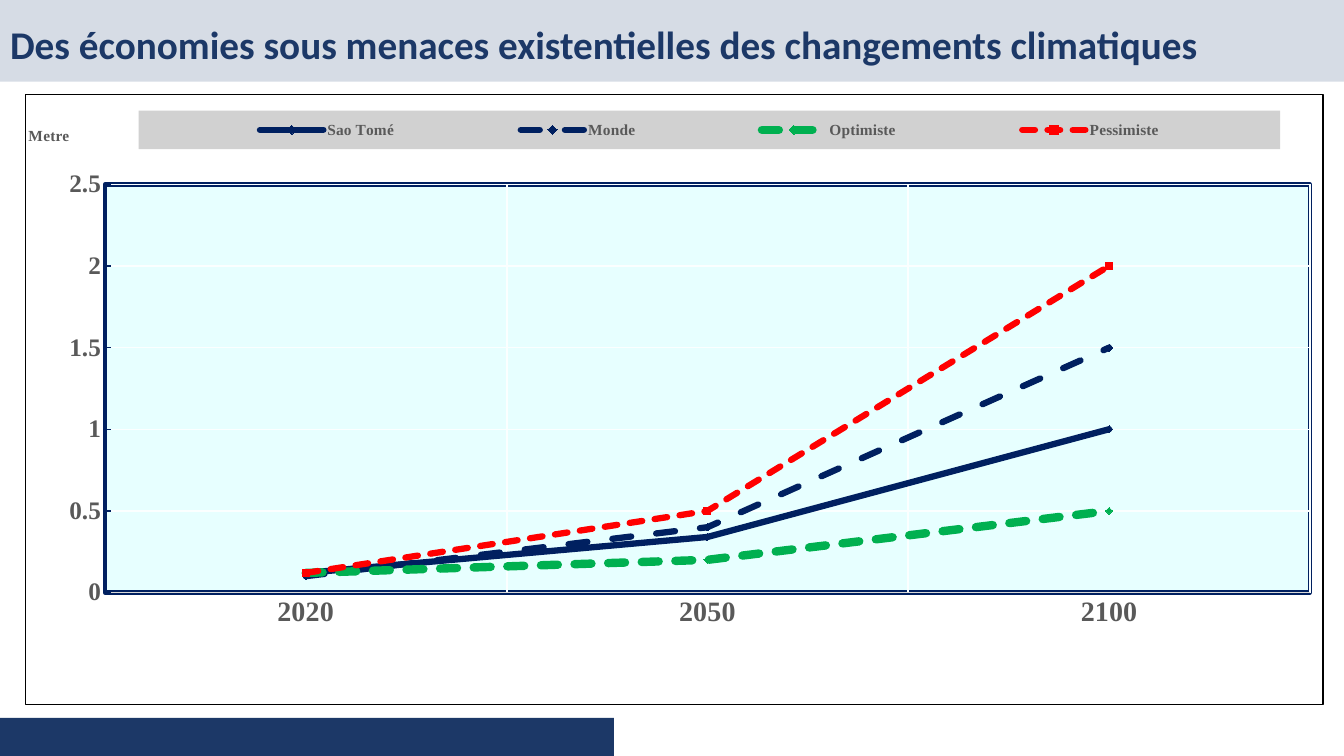
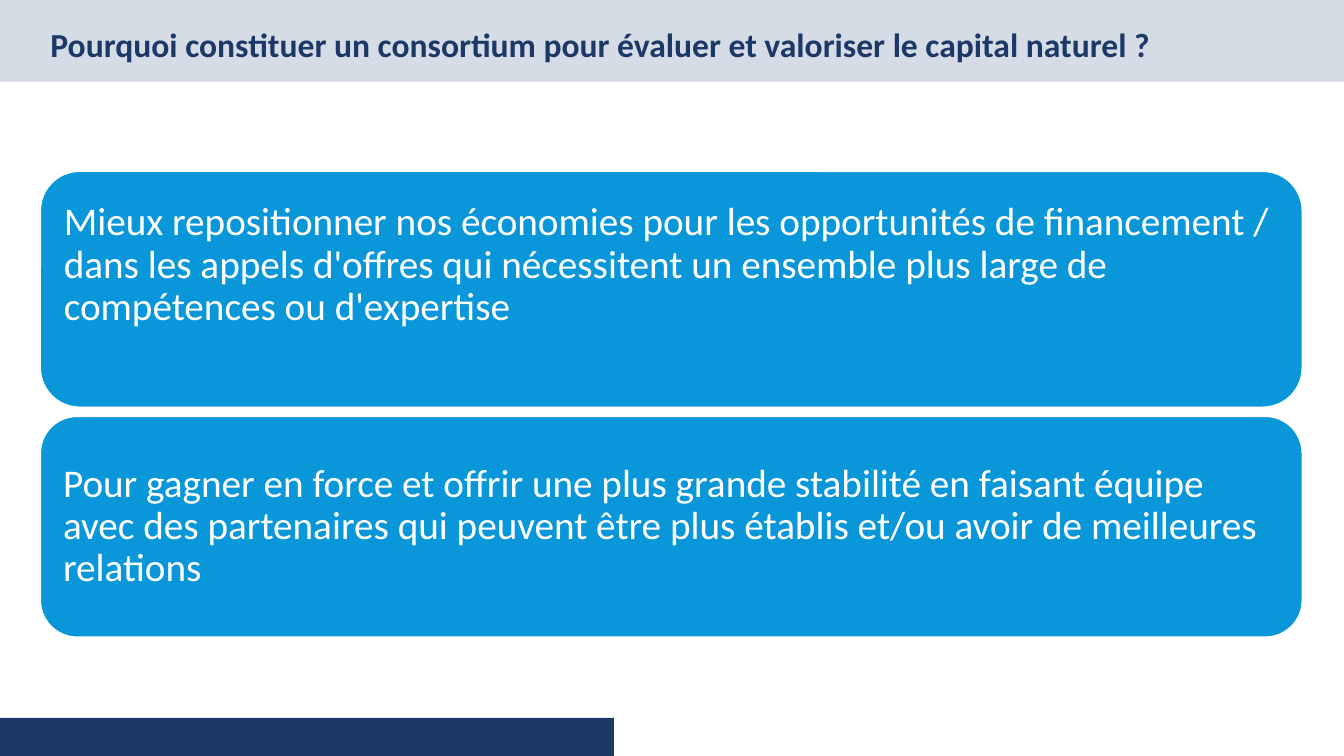
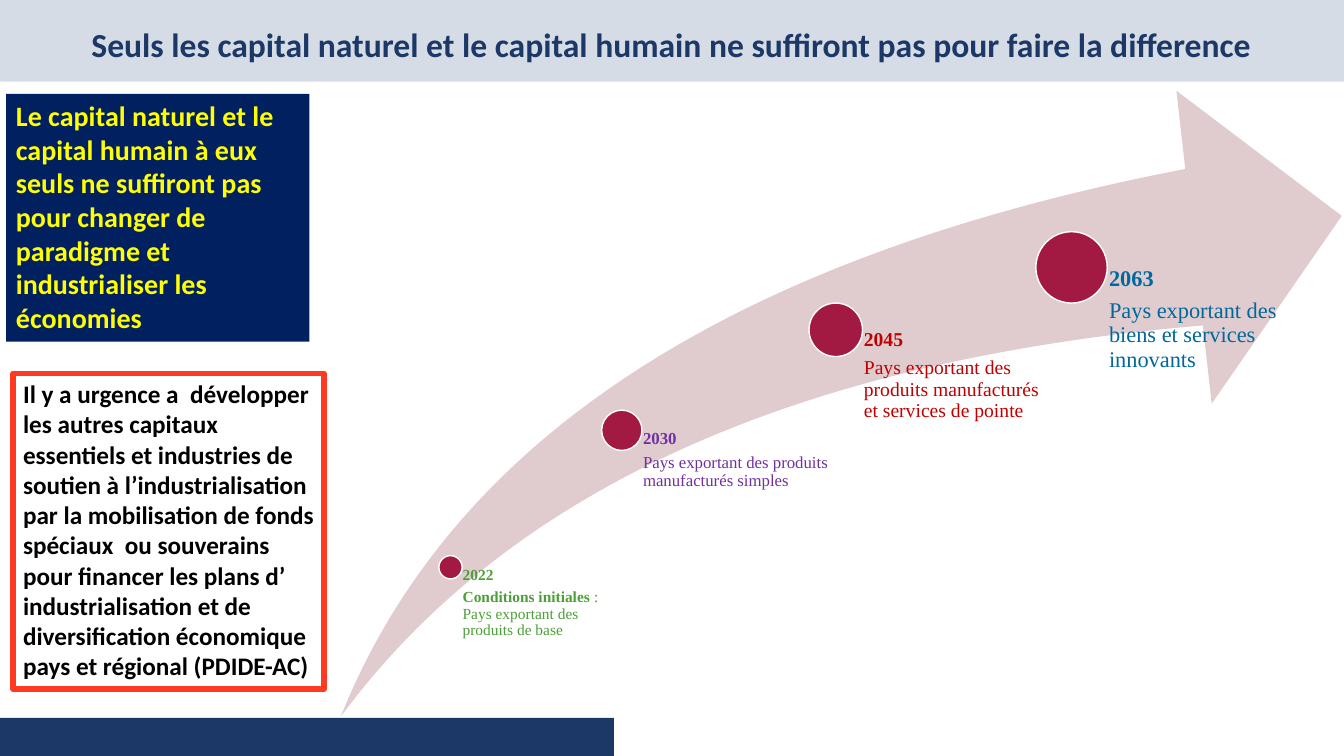
from pptx import Presentation
from pptx.chart.data import CategoryChartData
from pptx.dml.color import RGBColor
from pptx.enum.chart import XL_CHART_TYPE, XL_LEGEND_POSITION, XL_MARKER_STYLE, XL_TICK_MARK
from pptx.enum.dml import MSO_LINE
from pptx.enum.shapes import MSO_SHAPE
from pptx.enum.text import MSO_ANCHOR, MSO_AUTO_SIZE, PP_ALIGN
from pptx.oxml import parse_xml
from pptx.oxml.ns import nsdecls
from pptx.util import Pt

# Shared look
NAVY, DEEP_BLUE, GREY = "1C3867", "002060", "595959"
SANS, SERIF = "Calibri", "Times New Roman"
BANDS = [((0, 0, 960, 58.3), "D6DCE5"), ((0, 512.8, 438.5, 27.2), NAVY)]
MARGIN, CONTENT_W = 28.8, 901.4

# Slide 1: sea level chart
CLIMATE_TITLE = "Des économies sous menaces existentielles des changements climatiques"
YEARS = ["2020", "2050", "2100"]
SCENARIOS = [  # name, values, colour, width, dash, marker
    ("Sao Tomé", (0.12, 0.34, 1), DEEP_BLUE, 4.5, MSO_LINE.SOLID, XL_MARKER_STYLE.DIAMOND),
    ("Monde", (0.1, 0.4, 1.5), DEEP_BLUE, 4.5, MSO_LINE.DASH, XL_MARKER_STYLE.DIAMOND),
    ("Optimiste", (0.12, 0.2, 0.5), "00B050", 6, MSO_LINE.SQUARE_DOT, XL_MARKER_STYLE.DIAMOND),
    ("Pessimiste", (0.12, 0.5, 2), "FF0000", 4.5, MSO_LINE.SQUARE_DOT, XL_MARKER_STYLE.SQUARE),
]

# Slide 2: reasons
CONSORTIUM_TITLE = "Pourquoi constituer un consortium pour évaluer et valoriser le capital naturel ?"
REASONS = [  # text, top, height, extra space below the text
    ("Mieux repositionner nos économies pour les opportunités de financement /\v"
     "dans les appels d'offres qui nécessitent un ensemble plus large de compétences "
     "ou d'expertise", 122.4, 168.5, 34),
    ("Pour gagner en force et offrir une plus grande stabilité en faisant équipe avec des "
     "partenaires qui peuvent être plus établis et/ou avoir de meilleures relations",
     297.4, 157.7, 0),
]

# Slide 3: road to 2063
ROADMAP_TITLE = ("Seuls les capital naturel et le capital humain ne suffiront pas "
                 "pour faire la difference")
MESSAGES = [  # text, place, fill, line, text colour, size
    ("Il y a urgence a  développer les autres capitaux essentiels et industries de soutien à "
     "l’industrialisation par la mobilisation de fonds spéciaux  ou souverains pour financer "
     "les plans d’ industrialisation et de diversification économique pays et régional (PDIDE-AC)",
     (9.4, 266.8, 222, 225.4), None, "FF3A21", "000000", 18),
    ("Le capital naturel et le capital humain à eux seuls ne suffiront pas pour changer de "
     "paradigme et industrialiser les économies",
     (4.3, 67, 216.7, 177.1), DEEP_BLUE, None, "FFFF00", 20),
]
SWOOSH = (243.4, 64.8, 715, 447.1)
STAGES = [  # year, bold lead, text, centre, diameter, text width, colour, size
    ("2022", "Conditions initiales ", ": Pays exportant des produits de base",
     (321.8, 405.2), 16.6, 122.4, "4C9F38", 11),
    ("2030", "", "Pays exportant des produits manufacturés simples",
     (444.2, 307.4), 28.8, 150.5, "7030A0", 12),
    ("2045", "", "Pays exportant des produits manufacturés et services de pointe",
     (597, 235.6), 38.2, 150.5, "C00000", 14),
    ("2063", "", "Pays exportant des biens et services innovants",
     (765.4, 191), 51, 150.5, "00689D", 16),
]


def rgb(value):
    return RGBColor.from_string(value)


def apply(target, **values):
    for key, value in values.items():
        setattr(target, key, value)


def style_font(font, size, color, bold=False, name=SANS):
    apply(font, size=Pt(size), bold=bold, name=name)
    font.color.rgb = rgb(color)


def style_line(line, color, width):
    line.color.rgb = rgb(color)
    line.width = Pt(width)


def add_box(slide, kind, place, fill=None, line=None, width=1):
    box = slide.shapes.add_shape(kind, *map(Pt, place))
    box.shadow.inherit = False
    if fill:
        box.fill.solid()
        box.fill.fore_color.rgb = rgb(fill)
    else:
        box.fill.background()
    if line:
        style_line(box.line, line, width)
    else:
        box.line.fill.background()
    return box


def set_frame(frame, anchor=MSO_ANCHOR.TOP, insets=(7.2, 3.6, 7.2, 3.6)):
    left, top, right, bottom = map(Pt, insets)
    apply(frame, word_wrap=True, auto_size=MSO_AUTO_SIZE.NONE, vertical_anchor=anchor,
          margin_left=left, margin_top=top, margin_right=right, margin_bottom=bottom)


def write(paragraph, text, size, color, bold=False, align=PP_ALIGN.LEFT, spacing=0.9):
    paragraph.text = text
    apply(paragraph, alignment=align, line_spacing=spacing)
    for run in paragraph.runs:
        style_font(run.font, size, color, bold)


def add_slide(prs, text, size, align=PP_ALIGN.LEFT, left=MARGIN, width=CONTENT_W):
    slide = prs.slides.add_slide(prs.slide_layouts[5])
    title = slide.shapes.title
    apply(title, left=Pt(left), top=Pt(10.2), width=Pt(width), height=Pt(46.1))
    set_frame(title.text_frame, MSO_ANCHOR.MIDDLE)
    write(title.text_frame.paragraphs[0], text, size, NAVY, True, align)
    return slide


def move_bands_to_layout(slide):
    for order, (place, fill) in enumerate(BANDS):
        band = add_box(slide, MSO_SHAPE.RECTANGLE, place, fill)
        slide.slide_layout.shapes.element.insert(2 + order, band.element)


# Chart parts that need XML
def set_layout(parent, index, x, y, w=None, h=None, inner=False):
    for old in parent.xpath("c:layout"):
        parent.remove(old)
    values = [("xMode", "edge"), ("yMode", "edge"), ("x", x), ("y", y)]
    if inner:
        values.insert(0, ("layoutTarget", "inner"))
    if w:
        values += [("w", w), ("h", h)]
    body = "".join(f'<c:{tag} val="{value}"/>' for tag, value in values)
    parent.insert(index, parse_xml(
        f'<c:layout {nsdecls("c")}><c:manualLayout>{body}</c:manualLayout></c:layout>'))


def area_format(fill, line=None, width=0):
    def solid(color):
        return f'<a:solidFill><a:srgbClr val="{color}"/></a:solidFill>'
    outline = f'<a:ln w="{Pt(width)}">{solid(line)}</a:ln>' if line else ""
    return parse_xml(f'<c:spPr {nsdecls("c", "a")}>{solid(fill)}{outline}</c:spPr>')


def add_sea_level_chart(slide):
    data = CategoryChartData()
    data.categories = YEARS
    for name, values, *_ in SCENARIOS:
        data.add_series(name, values)
    chart = slide.shapes.add_chart(XL_CHART_TYPE.LINE_MARKERS, Pt(18), Pt(67.4),
                                   Pt(927.4), Pt(435.9), data).chart
    apply(chart, has_title=False, has_legend=True)
    style_font(chart.font, 10, "000000")
    chart.plots[0].vary_by_categories = False

    # Scenario lines
    for series, (_, _, color, width, dash, marker) in zip(chart.plots[0].series, SCENARIOS):
        series.smooth = False
        style_line(series.format.line, color, width)
        series.format.line.dash_style = dash
        apply(series.marker, style=marker, size=5)
        series.marker.format.fill.solid()
        series.marker.format.fill.fore_color.rgb = rgb(color)
        style_line(series.marker.format.line, color, 0.75)
    for outline in chart.element.xpath(".//c:ser/c:spPr/a:ln"):
        outline.set("cap", "rnd")

    # Axes
    years, metres = chart.category_axis, chart.value_axis
    for axis, size, tick, line, line_w, grid_w in (
            (years, 20, XL_TICK_MARK.NONE, "D9D9D9", 0.75, 1.5),
            (metres, 18, XL_TICK_MARK.INSIDE, DEEP_BLUE, 1, 1)):
        apply(axis, has_major_gridlines=True, major_tick_mark=tick,
              minor_tick_mark=XL_TICK_MARK.NONE)
        style_font(axis.tick_labels.font, size, GREY, True, SERIF)
        style_line(axis.format.line, line, line_w)
        style_line(axis.major_gridlines.format.line, "FBFFFF", grid_w)
    apply(metres, minimum_scale=0, maximum_scale=2.5, major_unit=0.5, has_title=True)
    unit = metres.axis_title
    unit.text_frame.text = "Metre"
    style_font(unit.text_frame.paragraphs[0].runs[0].font, 11, GREY, True, SERIF)
    unit_body = unit.element.xpath(".//a:bodyPr")[0]
    unit_body.set("rot", "0")
    unit_body.set("vert", "horz")
    set_layout(unit.element, 1, 0, 0.047)

    # Legend, plot and frame
    apply(chart.legend, position=XL_LEGEND_POSITION.TOP, include_in_layout=False)
    style_font(chart.legend.font, 11, GREY, True, SERIF)
    legend = chart.element.xpath(".//c:legend")[0]
    set_layout(legend, 1, 0.087, 0.026, 0.88, 0.063)
    legend.xpath("c:overlay")[0].addnext(area_format("D1D1D1"))
    plot = chart.element.xpath(".//c:plotArea")[0]
    set_layout(plot, 0, 0.061, 0.147, 0.929, 0.67, inner=True)
    plot.append(area_format("E7FFFF", DEEP_BLUE, 3))
    chart.element.xpath("c:chart")[0].addnext(area_format("FFFFFF", "000000", 0.75))


def add_reasons(slide):
    for text, top, height, below in REASONS:
        card = add_box(slide, MSO_SHAPE.ROUNDED_RECTANGLE, (MARGIN, top, CONTENT_W, height),
                       "0A97D9", "FFFFFF")
        set_frame(card.text_frame, MSO_ANCHOR.MIDDLE, (8.6, 8.6, 8.6, 8.6 + below))
        write(card.text_frame.paragraphs[0], text, 28, "FFFFFF")


def add_roadmap(slide):
    for text, place, fill, line, color, size in MESSAGES:
        message = add_box(slide, MSO_SHAPE.RECTANGLE, place, fill, line, 4)
        set_frame(message.text_frame, insets=(7.2, 3.6, 4, 3.6))
        write(message.text_frame.paragraphs[0], text, size, color, True, spacing=1)

    swoosh = add_box(slide, MSO_SHAPE.SWOOSH_ARROW, SWOOSH, "E0CCCF")
    swoosh.adjustments[0] = swoosh.adjustments[1] = 0.25
    bottom = SWOOSH[1] + SWOOSH[3]

    for year, lead, text, (x, y), diameter, width, color, size in STAGES:
        radius = diameter / 2
        add_box(slide, MSO_SHAPE.OVAL, (x - radius, y - radius, diameter, diameter),
                "A21942", "FFFFFF")
        label = slide.shapes.add_textbox(*map(Pt, (x, y, width, bottom - y))).text_frame
        set_frame(label, insets=(radius * 1.05, 0, 0, 0))
        heading, detail = label.paragraphs[0], label.add_paragraph()
        heading.space_after = Pt(round(0.35 * size, 1))
        for paragraph, parts in ((heading, [(year, True)]),
                                 (detail, [(lead, True), (text, False)])):
            paragraph.line_spacing = 0.9
            for words, bold in parts:
                if words:
                    run = paragraph.add_run()
                    run.text = words
                    style_font(run.font, size, color, bold, SERIF)


def main():
    prs = Presentation()
    apply(prs, slide_width=Pt(960), slide_height=Pt(540))
    climate = add_slide(prs, CLIMATE_TITLE, 28, left=0, width=960)
    move_bands_to_layout(climate)
    add_sea_level_chart(climate)
    add_reasons(add_slide(prs, CONSORTIUM_TITLE, 24))
    add_roadmap(add_slide(prs, ROADMAP_TITLE, 24, PP_ALIGN.CENTER))
    prs.save("out.pptx")


if __name__ == "__main__":
    main()
